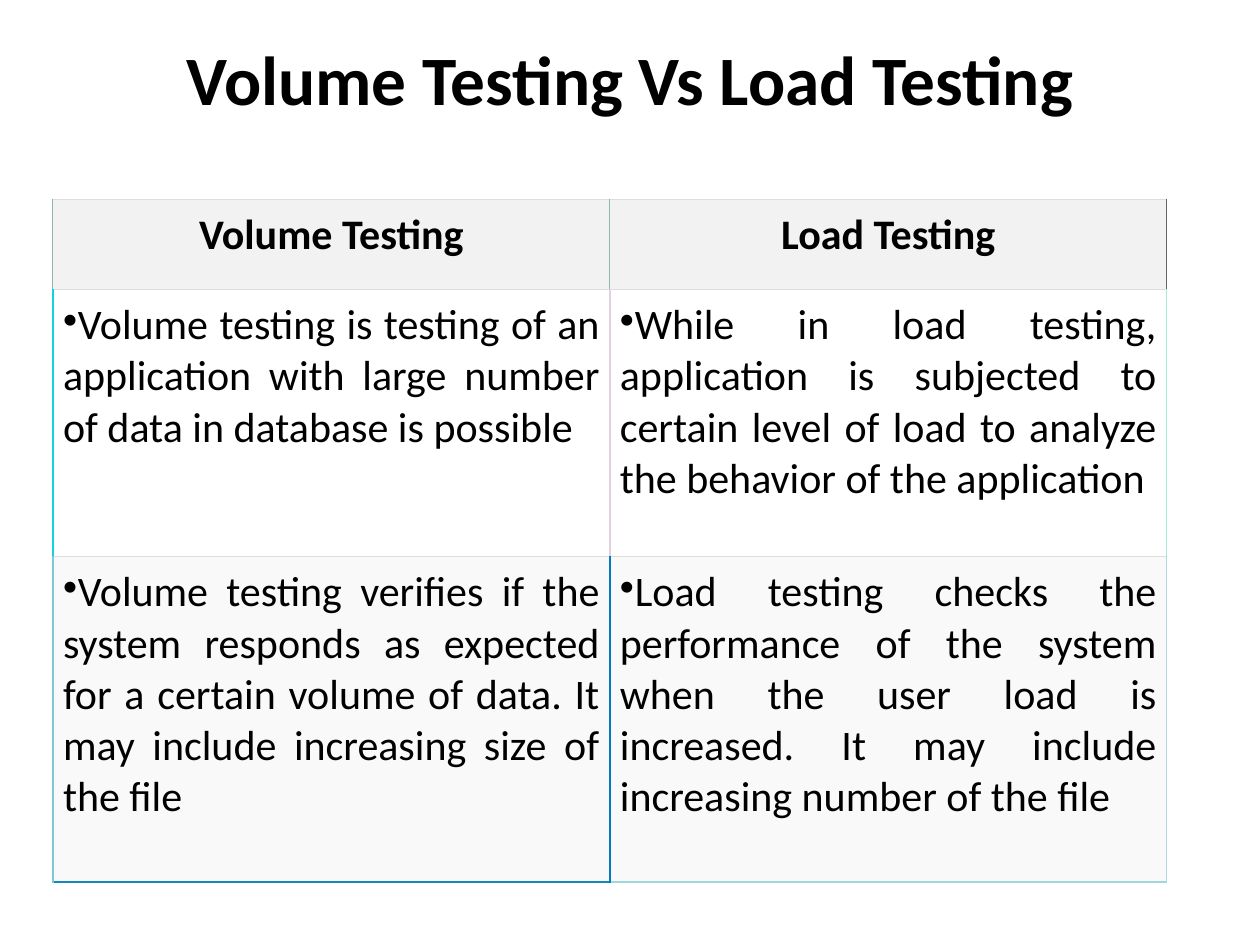
from lxml import etree
from pptx import Presentation
from pptx.dml.color import RGBColor
from pptx.enum import text as t
from pptx.oxml.ns import qn
from pptx.util import Inches, Pt

TITLE = "Volume Testing Vs Load Testing"
ROWS = [
    ("Volume Testing", "Load Testing"),
    ("Volume testing is testing of an application with large number of data "
     "in database is possible",
     "While in load testing, application is subjected to certain level of load "
     "to analyze the behavior of the application"),
    ("Volume testing verifies if the system responds as expected for a certain "
     "volume of data. It may include increasing size of the file",
     "Load testing checks the performance of the system when the user load is "
     "increased. It may include increasing number of the file"),
]
ROW_HEIGHTS = [0.72, 2.12, 2.58]
ROW_FILLS = ["F2F2F2", "FFFFFF", "F9F9F9"]
COLUMN_WIDTH = 4.42

# Colour and width in points of each grid line
GREY, GREEN = ("DDDDDD", 0.75), ("90B6AD", 0.75)
VERTICAL_LINES = [  # per row, from left to right
    [GREEN, GREEN, ("666666", 1)],
    [("10D4DE", 1), ("E0D2DE", 1), ("A0EEDB", 1)],
    [("80C8D4", 1), ("007CC1", 1), ("B0D7DE", 1)],
]
HORIZONTAL_LINES = [  # per column, from top to bottom
    [GREY, GREY, GREY, ("1088C0", 1)],
    [GREY, GREY, GREY, ("A0D7DE", 1)],
]


def color(value):
    return RGBColor.from_string(value)


def write(paragraph, words, size, bold, align):
    paragraph.alignment = align
    run = paragraph.add_run()
    run.text = words
    for name, value in {"name": "Calibri", "size": Pt(size), "bold": bold}.items():
        setattr(run.font, name, value)
    run.font.color.rgb = color("000000")


def add_bullet(paragraph):
    properties = paragraph._p.get_or_add_pPr()
    properties.set("marL", "0")
    properties.set("indent", "0")
    etree.SubElement(properties, qn("a:buChar")).set("char", "•")


def set_borders(cell, lines):
    """Draw the left, right, top and bottom lines, which must precede the fill."""
    properties = cell._tc.get_or_add_tcPr()
    for place, (side, (value, width)) in enumerate(zip("LRTB", lines)):
        line = etree.Element(qn(f"a:ln{side}"), w=str(Pt(width)))
        fill = etree.SubElement(line, qn("a:solidFill"))
        etree.SubElement(fill, qn("a:srgbClr")).set("val", value)
        properties.insert(place, line)


def add_title(slide):
    frame = slide.shapes.add_textbox(
        Inches(0.5), Inches(0.3), Inches(9), Inches(1.25)).text_frame
    layout = {"word_wrap": True, "vertical_anchor": t.MSO_ANCHOR.MIDDLE,
              "margin_top": 0, "margin_bottom": Inches(0.61)}
    for name, value in layout.items():
        setattr(frame, name, value)
    write(frame.paragraphs[0], TITLE, 39.6, True, t.PP_ALIGN.CENTER)


def add_comparison(slide):
    columns = len(ROWS[0])
    table = slide.shapes.add_table(
        len(ROWS), columns, Inches(0.42), Inches(1.58),
        Inches(COLUMN_WIDTH * columns), Inches(sum(ROW_HEIGHTS))).table
    table.first_row = table.horz_banding = False
    for column in table.columns:
        column.width = Inches(COLUMN_WIDTH)
    for r, (row, height) in enumerate(zip(table.rows, ROW_HEIGHTS)):
        row.height = Inches(height)
        header = r == 0
        for c, cell in enumerate(row.cells):
            for side in ("left", "right", "top", "bottom"):
                setattr(cell, f"margin_{side}", Inches(0.08))
            cell.fill.solid()
            cell.fill.fore_color.rgb = color(ROW_FILLS[r])
            set_borders(cell, VERTICAL_LINES[r][c:c + 2] + HORIZONTAL_LINES[c][r:r + 2])
            paragraph = cell.text_frame.paragraphs[0]
            align = t.PP_ALIGN.CENTER if header else t.PP_ALIGN.JUSTIFY
            write(paragraph, ROWS[r][c], 24, header, align)
            if not header:
                add_bullet(paragraph)


def main():
    deck = Presentation()
    deck.slide_width, deck.slide_height = Inches(10), Inches(7.5)
    slide = deck.slides.add_slide(deck.slide_layouts[6])
    add_title(slide)
    add_comparison(slide)
    deck.save("out.pptx")


if __name__ == "__main__":
    main()
